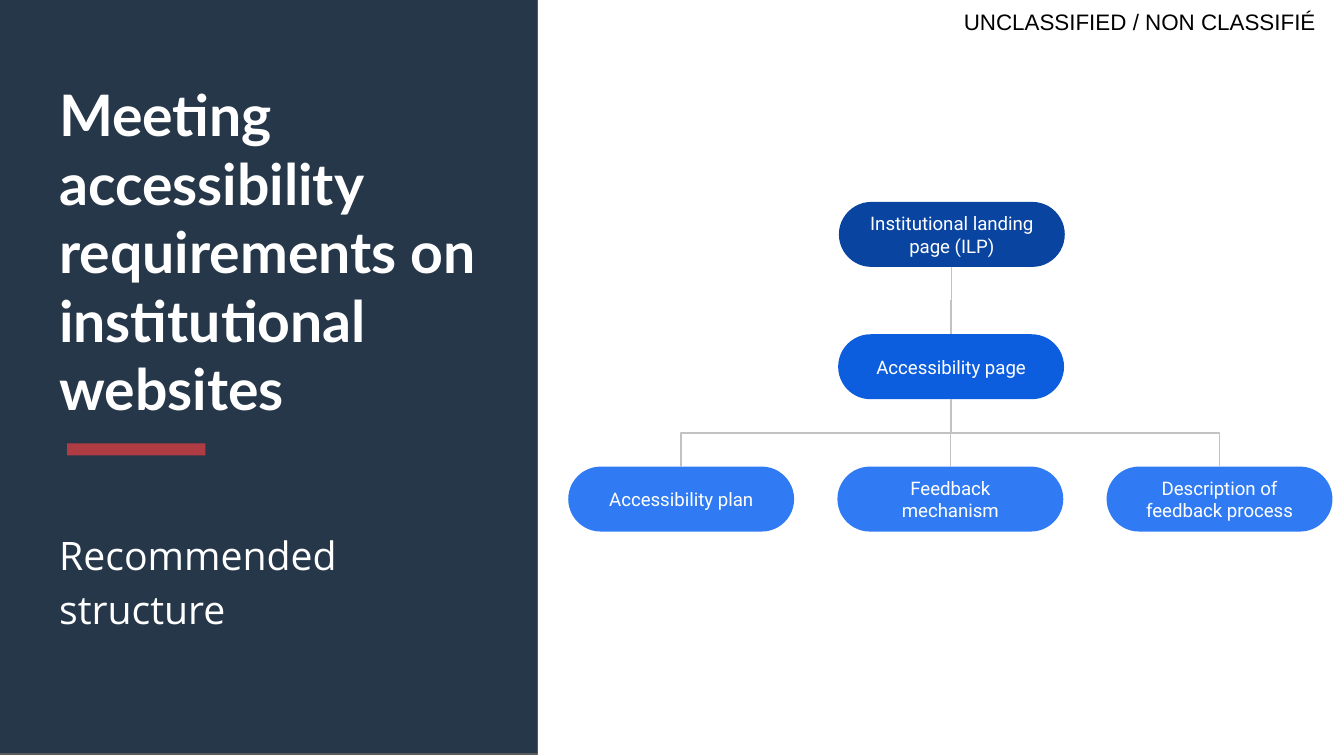
import pptx
import pptx.util
import pptx.dml.color
import pptx.enum.shapes
import pptx.enum.text
import pptx.oxml

Pt = pptx.util.Pt
SHAPE = pptx.enum.shapes.MSO_SHAPE
ALIGN = pptx.enum.text.PP_ALIGN
ANCHOR = pptx.enum.text.MSO_ANCHOR
NODE_W, NODE_H = 121, 34.8
TOP, ROW_STEP = 108.2, 70.9
LEFT, COL_STEP = 304.4, 144.2


def color(hex_value):
    return pptx.dml.color.RGBColor.from_string(hex_value)


def write(shape, text, font, size, fill="FFFFFF", bold=False, align=ALIGN.LEFT,
          anchor=ANCHOR.TOP, inset=7.2, right=None, spacing=1.0):
    tf = shape.text_frame
    tf.word_wrap = True
    tf.auto_size = pptx.enum.text.MSO_AUTO_SIZE.NONE
    tf.vertical_anchor = anchor
    tf.margin_left = tf.margin_top = tf.margin_bottom = Pt(inset)
    tf.margin_right = Pt(inset if right is None else right)
    p = tf.paragraphs[0]
    p.alignment = align
    p.line_spacing = spacing
    p.space_before = Pt(0)
    r = p.add_run()
    r.text = text
    r.font.name = font
    r.font.size = Pt(size)
    r.font.bold = bold
    r.font.color.rgb = color(fill)
    return r


def place(shape, x, y, w, h):
    shape.left, shape.top, shape.width, shape.height = Pt(x), Pt(y), Pt(w), Pt(h)


def add_block(s, kind, x, y, w, h, fill, line=None):
    sp = s.shapes.add_shape(kind, Pt(x), Pt(y), Pt(w), Pt(h))
    sp.shadow.inherit = False
    sp.fill.solid()
    sp.fill.fore_color.rgb = color(fill)
    if line:
        sp.line.color.rgb = color(line)
        sp.line.width = Pt(0.75)
    else:
        sp.line.fill.background()
    return sp


def add_node(s, text, x, row, fill):
    sp = add_block(s, SHAPE.ROUNDED_RECTANGLE, x, TOP + row * ROW_STEP, NODE_W, NODE_H, fill)
    sp.adjustments[0] = 0.5
    write(sp, text, "Roboto", 10, align=ALIGN.CENTER, anchor=ANCHOR.MIDDLE)
    return sp


def add_link(s, parent, child):
    x1, y1 = parent.left + parent.width // 2, parent.top + parent.height
    x2, y2 = child.left + child.width // 2, child.top
    c = s.shapes.add_connector(pptx.enum.shapes.MSO_CONNECTOR.ELBOW, x1, y1, x2, y2)
    c.begin_connect(parent, 2)
    c.end_connect(child, 0)
    c.line.color.rgb = color("C2C2C2")
    c.line.width = Pt(0.75)
    spPr = c.element.spPr
    spPr.append(pptx.oxml.parse_xml(
        '<a:effectLst xmlns:a="http://schemas.openxmlformats.org/drawingml/2006/main"/>'))
    run, drop = abs(x2 - x1), y2 - y1
    c.left, c.top = (x1 + x2 - drop) // 2, (y1 + y2 - run) // 2
    c.width, c.height = drop, run
    xfrm = spPr.find(pptx.oxml.ns.qn("a:xfrm"))
    xfrm.set("rot", "16200000" if x2 > x1 else "5400000")
    xfrm.set("flipH", "1" if x2 > x1 else "0")


def add_side_panel(s):
    panel = add_block(s, SHAPE.RECTANGLE, -3.6, -0.7, 291.6, 404.6, "26374A", "595959")
    s.shapes.element.insert(2, panel.element)
    title, body = s.placeholders
    place(title, 24.5, 35.3, 242, 113)
    r = write(title, "Meeting accessibility requirements on institutional websites",
              "Lato", 30.6, bold=True)
    r.font._element.set("cap", "none")
    place(body, 24.5, 273.6, 245.5, 113)
    write(body, "Recommended structure", "Open Sans", 21, spacing=1.15)
    add_block(s, SHAPE.RECTANGLE, 36, 237.5, 74, 6.5, "AF3C43")


def add_marking(s):
    sp = s.shapes.add_textbox(Pt(502.6), Pt(0), Pt(217.4), Pt(22.6))
    write(sp, "UNCLASSIFIED / NON CLASSIFIÉ", "Arial", 12, fill="000000",
          align=ALIGN.RIGHT, anchor=ANCHOR.MIDDLE, inset=0, right=15)


def add_tree(s):
    middle = LEFT + COL_STEP
    landing = add_node(s, "Institutional landing page (ILP)", middle + 0.8, 0, "0944A1")
    page = add_node(s, "Accessibility page", middle + 0.4, 1, "0D5DDF")
    add_link(s, landing, page)
    children = ["Accessibility plan", "Feedback mechanism", "Description of feedback process"]
    for i, text in enumerate(children):
        child = add_node(s, text, LEFT + i * COL_STEP, 2, "307BF3")
        add_link(s, page, child)


def main():
    prs = pptx.Presentation()
    prs.slide_width, prs.slide_height = Pt(720), Pt(405)
    s = prs.slides.add_slide(prs.slide_layouts.get_by_name("Section Header"))
    add_marking(s)
    add_side_panel(s)
    add_tree(s)
    prs.save("out.pptx")


if __name__ == "__main__":
    main()
